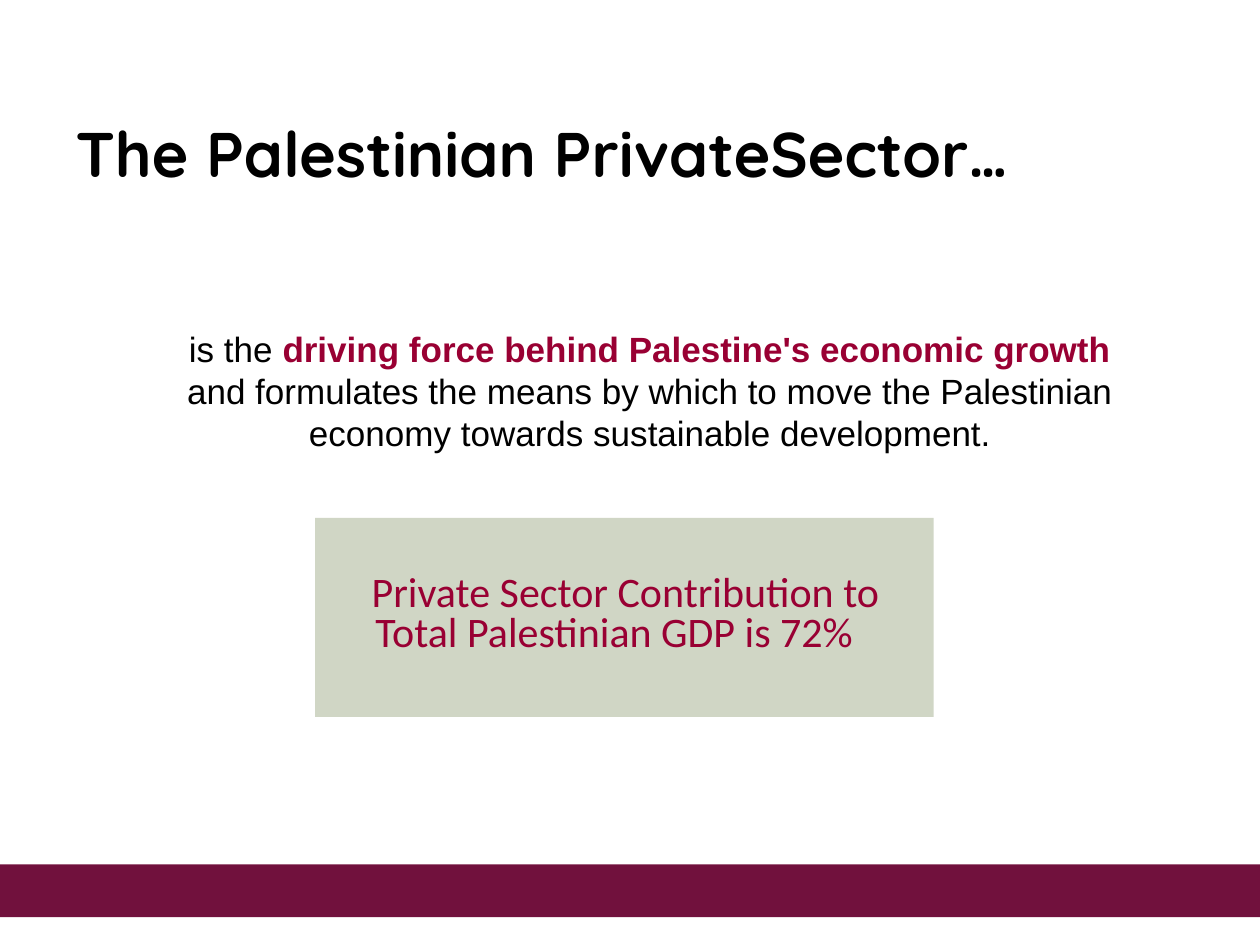
from dataclasses import dataclass

from pptx import Presentation
from pptx.dml.color import RGBColor
from pptx.enum.shapes import MSO_SHAPE as Preset
from pptx.enum.text import MSO_ANCHOR as Anchor, PP_ALIGN as Align
from pptx.util import Inches, Pt

# Slide grid: 100 columns by 75 rows
WIDTH, HEIGHT = Inches(10), Inches(7.5)
COLUMN, ROW = WIDTH / 100, HEIGHT / 75

COLORS = {
    "black": "000000",
    "crimson": "990033",
    "burgundy": "71113D",
    "sage": "D0D6C5",
}


@dataclass
class Area:
    column: float
    row: float
    columns: float
    rows: float

    def lengths(self) -> tuple[int, int, int, int]:
        return (round(self.column * COLUMN), round(self.row * ROW),
                round(self.columns * COLUMN), round(self.rows * ROW))


@dataclass
class Panel:
    area: Area
    color: str


@dataclass
class Span:
    text: str
    color: str = "black"
    bold: bool = False


@dataclass
class TextBlock:
    area: Area
    spans: list[Span]
    font: str
    size: int
    align: Align = Align.LEFT
    line_points: float | None = None
    hanging: float = 0  # columns by which later lines are set in


PANELS = [
    Panel(Area(0, 68.6, 100, 4.2), "burgundy"),
    Panel(Area(25, 41.1, 49.1, 15.8), "sage"),
]

TEXT_BLOCKS = [
    # Title
    TextBlock(Area(6, 9.1, 80, 7.2),
              [Span("The Palestinian PrivateSector…", bold=True)],
              "Quicksand", 36),
    # Statement
    TextBlock(Area(14.1, 26, 75, 10.3),
              [Span("is the "),
               Span("driving force behind Palestine's economic growth",
                    "crimson", True),
               Span(" and formulates the means by which to move the "
                    "Palestinian economy towards sustainable development.")],
              "Arial", 20, Align.CENTER, 24),
    # Key figure
    TextBlock(Area(29.5, 45.7, 43, 8),
              [Span("Private Sector Contribution to "
                    "Total Palestinian GDP is 72%", "crimson")],
              "Calibri", 24, line_points=23, hanging=0.3),
]


def rgb(name: str) -> RGBColor:
    return RGBColor.from_string(COLORS[name])


def draw_panel(slide, panel: Panel) -> None:
    shape = slide.shapes.add_shape(Preset.RECTANGLE, *panel.area.lengths())
    shape.shadow.inherit = False
    shape.fill.solid()
    shape.fill.fore_color.rgb = rgb(panel.color)
    shape.line.fill.background()


def draw_text(slide, block: TextBlock) -> None:
    frame = slide.shapes.add_textbox(*block.area.lengths()).text_frame
    frame.word_wrap = True
    frame.vertical_anchor = Anchor.TOP
    frame.margin_left = frame.margin_right = 0
    frame.margin_top = frame.margin_bottom = 0

    paragraph = frame.paragraphs[0]
    paragraph.alignment = block.align
    if block.line_points:
        paragraph.line_spacing = Pt(block.line_points)
    if block.hanging:
        indent = round(block.hanging * COLUMN)
        properties = paragraph._p.get_or_add_pPr()
        properties.set("marL", str(indent))
        properties.set("indent", str(-indent))

    for span in block.spans:
        run = paragraph.add_run()
        run.text = span.text
        run.font.name = block.font
        run.font.size = Pt(block.size)
        run.font.bold = span.bold
        run.font.color.rgb = rgb(span.color)


def main() -> None:
    presentation = Presentation()
    presentation.slide_width, presentation.slide_height = WIDTH, HEIGHT
    slide = presentation.slides.add_slide(presentation.slide_layouts[6])
    for panel in PANELS:
        draw_panel(slide, panel)
    for block in TEXT_BLOCKS:
        draw_text(slide, block)
    presentation.save("out.pptx")


if __name__ == "__main__":
    main()
